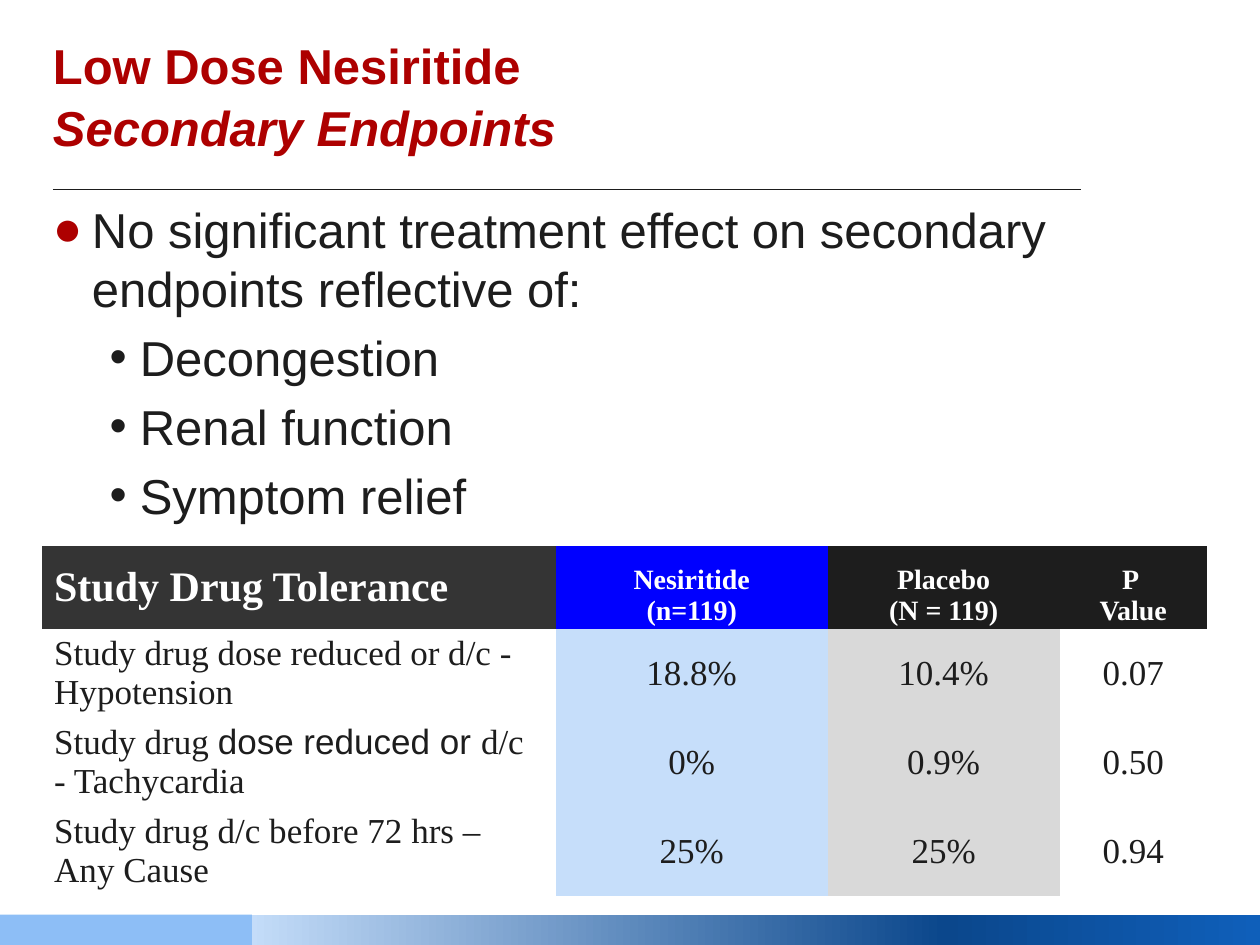
from copy import deepcopy

from lxml import etree
from pptx import Presentation
from pptx.dml.color import RGBColor
from pptx.enum.shapes import MSO_CONNECTOR, MSO_SHAPE
from pptx.enum.text import MSO_ANCHOR, PP_ALIGN
from pptx.oxml.ns import qn
from pptx.util import Inches, Pt

RECTANGLE = MSO_SHAPE.RECTANGLE
STRAIGHT = MSO_CONNECTOR.STRAIGHT
LEFT, CENTER = PP_ALIGN.LEFT, PP_ALIGN.CENTER
MIDDLE, BOTTOM = MSO_ANCHOR.MIDDLE, MSO_ANCHOR.BOTTOM
SANS, SERIF = "Arial", "Times New Roman"
NO_TABLE_STYLE = "{2D5ABB26-0587-4C30-8999-92F81FD0307C}"

COLORS = {
    "red": "AD0000", "ink": "1D1D1D", "white": "FFFFFF", "charcoal": "343434",
    "blue": "0000FF", "pale_blue": "C6DEFA", "gray": "D9D9D9",
    "sky": "8DBEF6", "navy": "0B478C", "royal": "0F5FBA",
}

TITLE = ("Low Dose Nesiritide", "Secondary Endpoints")
FINDING = "No significant treatment effect on secondary endpoints reflective of:"
ENDPOINTS = ["Decongestion", "Renal function", "Symptom relief"]
FINDING_BULLET = {"char": "●", "color": "red", "margin": 0.31, "hanging": 0.31}
ENDPOINT_BULLET = {"char": "•", "color": "ink", "margin": 0.69, "hanging": 0.24}

HEADERS = [["Study Drug Tolerance"], ["Nesiritide", "(n=119)"],
           ["Placebo", "(N = 119)"], ["P ", "Value"]]
OUTCOMES = [
    ("Study drug dose reduced or d/c - Hypotension", "18.8%", "10.4%", "0.07"),
    ([("Study drug ", {}), ("dose reduced or ", {"font": SANS}), ("d/c - Tachycardia", {})],
     "0%", "0.9%", "0.50"),
    ("Study drug d/c before 72 hrs – Any Cause", "25%", "25%", "0.94"),
]
COLUMN_WIDTHS = [4.08, 2.16, 1.84, 1.17]
HEADER_FILLS = ["charcoal", "blue", "ink", "ink"]
OUTCOME_FILLS = [None, "pale_blue", "gray", None]
ROW_HEIGHT = 0.66
BAND_STOPS = [("pale_blue", 0), ("navy", 0.69), ("royal", 1)]
BAND_TOP, BAND_HEIGHT = 7.26, 0.25


def rgb(name):
    return RGBColor.from_string(COLORS[name])


def add_bullet(paragraph, char, color, margin, hanging):
    properties = paragraph._p.get_or_add_pPr()
    properties.set("marL", str(Inches(margin)))
    properties.set("indent", str(-Inches(hanging)))
    bullet_color = etree.SubElement(properties, qn("a:buClr"))
    etree.SubElement(bullet_color, qn("a:srgbClr"), val=COLORS[color])
    etree.SubElement(properties, qn("a:buFont"), typeface=SANS)
    etree.SubElement(properties, qn("a:buChar"), char=char)


def write(frame, text, size=28, font=SANS, color="ink", bold=False, align=LEFT,
          line=None, before=0, bullet=None, first=True):
    paragraph = frame.paragraphs[0] if first else frame.add_paragraph()
    paragraph.alignment = align
    if line:
        paragraph.line_spacing = Pt(line)
    if before:
        paragraph.space_before = Pt(before)
    if bullet:
        add_bullet(paragraph, **bullet)
    for words, style in [(text, {})] if isinstance(text, str) else text:
        if words == "\n":
            paragraph.add_line_break()
            continue
        run = paragraph.add_run()
        run.text = words
        run.font.size = Pt(size)
        run.font.name = style.get("font", font)
        run.font.bold = bold
        run.font.italic = style.get("italic", False)
        run.font.color.rgb = rgb(color)


def add_frame(slide, left, top, width, height, anchor=None):
    frame = slide.shapes.add_textbox(*map(Inches, (left, top, width, height))).text_frame
    frame.word_wrap = True
    frame.margin_left = frame.margin_right = frame.margin_top = frame.margin_bottom = 0
    if anchor is not None:
        frame.vertical_anchor = anchor
    return frame


def add_band(slide, left, width):
    band = slide.shapes.add_shape(
        RECTANGLE, *map(Inches, (left, BAND_TOP, width, BAND_HEIGHT)))
    band.shadow.inherit = False
    band.line.fill.background()
    return band


def add_footer(slide):
    fade = add_band(slide, 1.92, 8.08).fill
    fade.gradient()
    fade.gradient_angle = 0
    stop_list = fade._xPr.find(qn("a:gradFill")).find(qn("a:gsLst"))
    stop_list.append(deepcopy(stop_list[-1]))
    for stop, (color, position) in zip(fade.gradient_stops, BAND_STOPS):
        stop.color.rgb = rgb(color)
        stop.position = position
    corner = add_band(slide, 0, 2)
    corner.fill.solid()
    corner.fill.fore_color.rgb = rgb("sky")


def add_rule(slide):
    rule = slide.shapes.add_connector(STRAIGHT, *map(Inches, (0.42, 1.5, 8.58, 1.5)))
    rule.line.color.rgb = rgb("ink")
    rule.line.width = Pt(0.5)
    etree.SubElement(rule._element.spPr, qn("a:effectLst"))


def fill_cell(cell, lines, fill, anchor, **style):
    cell.margin_left = cell.margin_right = Inches(0.1)
    cell.margin_top = cell.margin_bottom = Inches(0.02)
    cell.vertical_anchor = anchor
    if fill:
        cell.fill.solid()
        cell.fill.fore_color.rgb = rgb(fill)
    else:
        cell.fill.background()
    for index, text in enumerate(lines):
        write(cell.text_frame, text, font=SERIF, first=index == 0, **style)


def add_tolerance_table(slide):
    row_count = len(OUTCOMES) + 1
    table = slide.shapes.add_table(
        row_count, len(HEADERS), Inches(0.33), Inches(4.33),
        Inches(sum(COLUMN_WIDTHS)), Inches(ROW_HEIGHT * row_count)).table
    table._tbl.tblPr.find(qn("a:tableStyleId")).text = NO_TABLE_STYLE
    table.horz_banding = False
    for column, width in zip(table.columns, COLUMN_WIDTHS):
        column.width = Inches(width)
    for index, (lines, fill) in enumerate(zip(HEADERS, HEADER_FILLS)):
        is_label = index == 0
        fill_cell(table.cell(0, index), lines, fill, MIDDLE if is_label else BOTTOM,
                  size=24 if is_label else 16, color="white", bold=True,
                  align=LEFT if is_label else CENTER)
    for row, outcome in enumerate(OUTCOMES, 1):
        for index, (value, fill) in enumerate(zip(outcome, OUTCOME_FILLS)):
            fill_cell(table.cell(row, index), [value], fill, MIDDLE, size=20,
                      align=CENTER if index else LEFT)


def main():
    deck = Presentation()
    deck.slide_width, deck.slide_height = Inches(10), Inches(7.5)
    slide = deck.slides.add_slide(deck.slide_layouts[6])
    add_footer(slide)
    add_rule(slide)

    drug, topic = TITLE
    title = add_frame(slide, 0.42, 0.26, 7.25, 0.98, BOTTOM)
    write(title, [(drug, {}), ("\n", {}), (topic, {"italic": True})],
          color="red", bold=True, line=35.4)

    body = add_frame(slide, 0.42, 1.58, 8.16, 2.64)
    write(body, FINDING, line=33.8, bullet=FINDING_BULLET)
    for endpoint in ENDPOINTS:
        write(body, endpoint, line=33.8, before=5.6, bullet=ENDPOINT_BULLET, first=False)

    add_tolerance_table(slide)
    deck.save("out.pptx")


if __name__ == "__main__":
    main()
